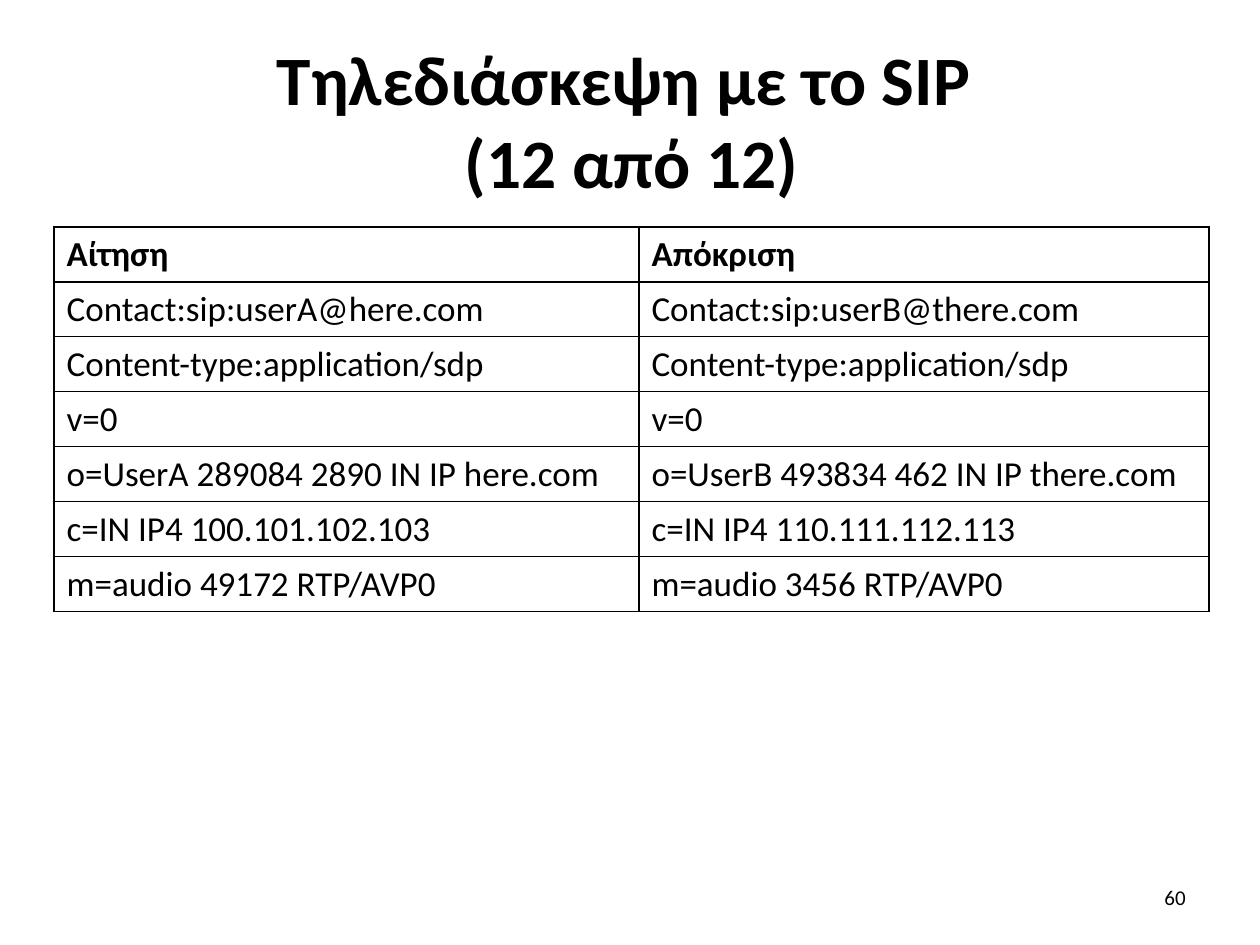
from pptx import Presentation
from pptx.dml.color import RGBColor as RGB
from pptx.enum.text import MSO_ANCHOR as Anchor, PP_ALIGN as Align
from pptx.oxml import parse_xml
from pptx.oxml.ns import nsdecls
from pptx.util import Pt

PX = 914400 / 126  # EMU in one px
THEME = {
    "ink": "000000", "paper": "FFFFFF", "font": "Calibri",
    "title": 39.6, "body": 20, "footer": 12, "border": 0.75,
}


def px(length):
    return round(length * PX)


def style(paragraph, size, bold=False, align=Align.LEFT):
    paragraph.alignment = align
    font_format = {"name": THEME["font"], "size": Pt(size), "bold": bold}
    for run in paragraph.runs:
        for attribute, value in font_format.items():
            setattr(run.font, attribute, value)
        run.font.color.rgb = RGB.from_string(THEME["ink"])


deck = Presentation()
deck.slide_width, deck.slide_height = px(1260), px(945)
slide = deck.slides.add_slide(deck.slide_layouts[6])

# Title and page number
labels = [
    ("Τηλεδιάσκεψη με το SIP \v(12 από 12)", (54, 43, 1155, 152), THEME["title"], True, Align.CENTER),
    ("60", (905, 872, 293, 50), THEME["footer"], False, Align.RIGHT),
]
for wording, place, size, bold, align in labels:
    frame = slide.shapes.add_textbox(*map(px, place)).text_frame
    frame.word_wrap = True
    frame.vertical_anchor = Anchor.MIDDLE
    frame.text = wording
    style(frame.paragraphs[0], size, bold, align)

# SIP messages: request beside response
messages = [
    ("Αίτηση", "Απόκριση"),
    ("Contact:sip:userA@here.com", "Contact:sip:userB@there.com"),
    ("Content-type:application/sdp", "Content-type:application/sdp"),
    ("v=0", "v=0"),
    ("o=UserA 289084 2890 IN IP here.com", "o=UserB 493834 462 IN IP there.com"),
    ("c=IN IP4 100.101.102.103", "c=IN IP4 110.111.112.113"),
    ("m=audio 49172 RTP/AVP0", "m=audio 3456 RTP/AVP0"),
]
column_widths = (585, 570)
row_height, hanging_indent, first_centred_row = 55, 48, 3

table = slide.shapes.add_table(
    len(messages), len(column_widths),
    px(54), px(227), px(sum(column_widths)), px(row_height * len(messages)),
).table
table.horz_banding = False
for column, width in zip(table.columns, column_widths):
    column.width = px(width)

for row, pair in enumerate(messages):
    for col, wording in enumerate(pair):
        cell = table.cell(row, col)
        cell.text = wording
        cell.vertical_anchor = Anchor.MIDDLE if row >= first_centred_row else Anchor.TOP
        paragraph = cell.text_frame.paragraphs[0]
        style(paragraph, THEME["body"], bold=row == 0)
        if row > 0:
            properties = paragraph._p.get_or_add_pPr()
            properties.set("marL", str(px(hanging_indent)))
            properties.set("indent", str(-px(hanging_indent)))
        for side in "LRTB":
            cell._tc.get_or_add_tcPr().append(parse_xml(
                f'<a:ln{side} {nsdecls("a")} w="{Pt(THEME["border"])}"><a:solidFill>'
                f'<a:srgbClr val="{THEME["ink"]}"/></a:solidFill></a:ln{side}>'
            ))
        cell.fill.solid()
        cell.fill.fore_color.rgb = RGB.from_string(THEME["paper"])

deck.save("out.pptx")
